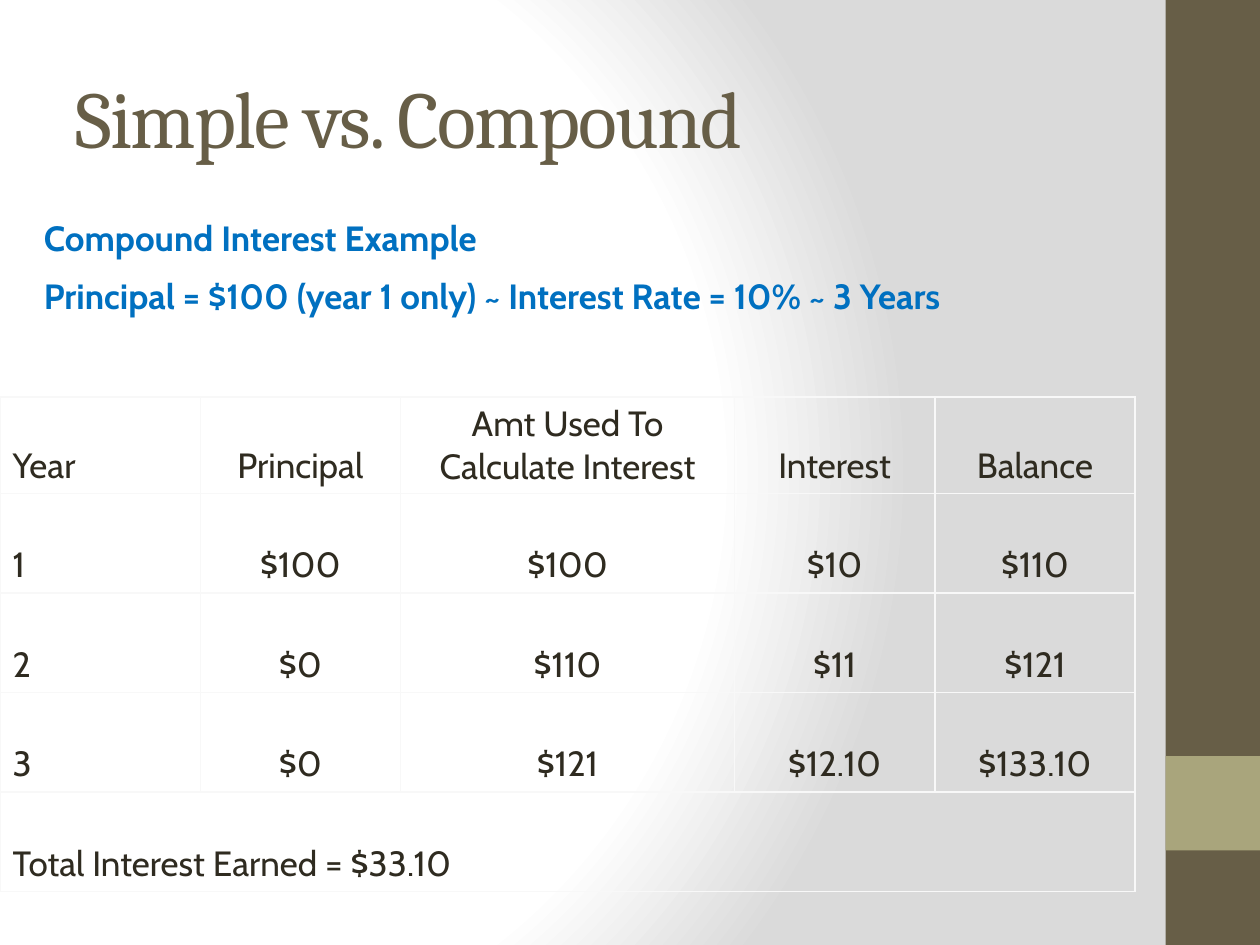
from typing import NamedTuple

from pptx import Presentation
from pptx.dml.color import RGBColor
from pptx.enum.shapes import MSO_SHAPE
from pptx.enum.text import MSO_ANCHOR as Anchor, PP_ALIGN as Align
from pptx.oxml import parse_xml
from pptx.oxml.ns import nsdecls
from pptx.slide import Slide
from pptx.table import _Cell as Cell
from pptx.util import Inches, Pt

BROWN = RGBColor(0x67, 0x5E, 0x47)
OLIVE = RGBColor(0xA9, 0xA5, 0x7C)
INK = RGBColor(0x2F, 0x2B, 0x20)
BLUE = RGBColor(0x00, 0x70, 0xC0)
WHITE = RGBColor(0xFF, 0xFF, 0xFF)
GREY = RGBColor(0xDA, 0xDA, 0xDA)
BORDER = RGBColor(0xF8, 0xF8, 0xF8)


class Band(NamedTuple):
    top: float
    height: float
    color: RGBColor


class TextStyle(NamedTuple):
    font: str
    size: int
    color: RGBColor
    bold: bool = False


TITLE = TextStyle("Cambria", 46, BROWN)
SUBTITLE = TextStyle("Cabin", 20, BLUE, True)
BODY = TextStyle("Cabin", 20, INK)

BANDS = [Band(0, 7.5, BROWN), Band(6, 0.75, OLIVE)]
EXAMPLE = [
    "Compound Interest Example",
    "Principal = $100 (year 1 only) ~ Interest Rate = 10% ~ 3 Years",
]
ROWS = [
    ["Year", "Principal", "Amt Used To Calculate Interest", "Interest", "Balance"],
    ["1", "$100", "$100", "$10", "$110"],
    ["2", "$0", "$110", "$11", "$121"],
    ["3", "$0", "$121", "$12.10", "$133.10"],
    ["Total Interest Earned = $33.10"],
]
COLUMN_WIDTHS = [1.59, 1.59, 2.65, 1.59, 1.59]
ROW_HEIGHTS = [0.69] + [0.79] * 4


def set_background(page: Slide) -> None:
    stops = "".join(
        f'<a:gs pos="{position * 1000}"><a:srgbClr val="{color}"/></a:gs>'
        for position, color in [(0, WHITE), (75, WHITE), (100, GREY)]
    )
    background = parse_xml(
        f'<p:bg {nsdecls("p", "a")}><p:bgPr><a:gradFill rotWithShape="1">'
        f'<a:gsLst>{stops}</a:gsLst><a:path path="circle">'
        '<a:fillToRect l="20000" t="50000" r="100000" b="50000"/></a:path>'
        "</a:gradFill><a:effectLst/></p:bgPr></p:bg>"
    )
    page.element.cSld.insert(0, background)


def draw_band(page: Slide, band: Band) -> None:
    shape = page.shapes.add_shape(
        MSO_SHAPE.RECTANGLE,
        Inches(9.25), Inches(band.top), Inches(0.75), Inches(band.height),
    )
    shape.shadow.inherit = False
    shape.fill.solid()
    shape.fill.fore_color.rgb = band.color
    shape.line.fill.background()


def format_text(frame, style: TextStyle) -> None:
    for para in frame.paragraphs:
        for span in para.runs:
            span.font.name = style.font
            span.font.size = Pt(style.size)
            span.font.bold = style.bold
            span.font.color.rgb = style.color


def draw_text(page: Slide, lines: list[str], left: float, top: float,
              width: float, height: float, style: TextStyle):
    box = page.shapes.add_textbox(
        Inches(left), Inches(top), Inches(width), Inches(height))
    frame = box.text_frame
    frame.word_wrap = True
    frame.text = "\n".join(lines)
    for para in frame.paragraphs[1:]:
        para.space_before = Pt(9)
    format_text(frame, style)
    return frame


def set_borders(cell: Cell) -> None:
    properties = cell._tc.get_or_add_tcPr()
    for side in ("lnL", "lnR", "lnT", "lnB"):
        properties.append(parse_xml(
            f'<a:{side} {nsdecls("a")} w="{Pt(1)}"><a:solidFill>'
            f'<a:srgbClr val="{BORDER}"/></a:solidFill></a:{side}>'
        ))


def draw_table(page: Slide) -> None:
    table = page.shapes.add_table(
        len(ROWS), len(COLUMN_WIDTHS), Inches(0), Inches(3.15),
        Inches(sum(COLUMN_WIDTHS)), Inches(sum(ROW_HEIGHTS)),
    ).table
    table.first_row = table.horz_banding = False
    for column, width in zip(table.columns, COLUMN_WIDTHS):
        column.width = Inches(width)
    for row, height in zip(table.rows, ROW_HEIGHTS):
        row.height = Inches(height)
    for cell in table.iter_cells():
        set_borders(cell)
        cell.fill.background()

    # The total spans the whole last row
    last = len(ROWS) - 1
    table.cell(last, 0).merge(table.cell(last, len(COLUMN_WIDTHS) - 1))

    for row_index, values in enumerate(ROWS):
        for column_index, value in enumerate(values):
            cell = table.cell(row_index, column_index)
            cell.text_frame.text = value
            cell.vertical_anchor = Anchor.BOTTOM
            cell.text_frame.paragraphs[0].alignment = (
                Align.CENTER if column_index else Align.LEFT)
            format_text(cell.text_frame, BODY)


def main() -> None:
    deck = Presentation()
    deck.slide_width, deck.slide_height = Inches(10), Inches(7.5)
    page = deck.slides.add_slide(deck.slide_layouts[6])

    # Background and side bands
    set_background(page)
    for band in BANDS:
        draw_band(page, band)

    # Title with slightly tightened letters
    title = draw_text(page, ["Simple vs. Compound"], 0.5, 0.3, 8.33, 1.25, TITLE)
    title.vertical_anchor = Anchor.MIDDLE
    title.paragraphs[0].runs[0].font._element.set("spc", "-100")

    # Interest table and its introduction
    draw_table(page)
    draw_text(page, EXAMPLE, 0.25, 1.67, 9.75, 0.94, SUBTITLE)

    deck.save("out.pptx")


if __name__ == "__main__":
    main()
